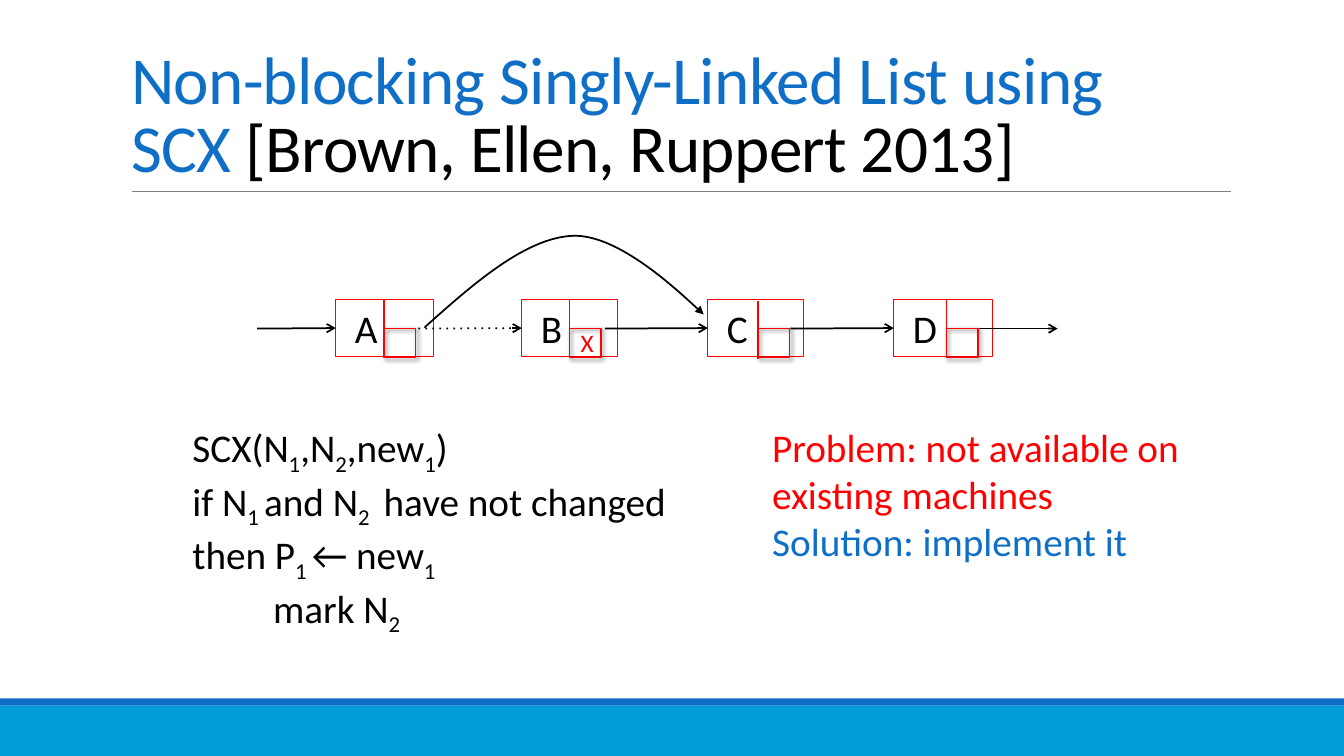
from dataclasses import dataclass

import lxml.etree
import pptx
import pptx.dml.color
import pptx.enum.shapes
import pptx.enum.text
import pptx.oxml.ns
import pptx.util

Inches = pptx.util.Inches
Pt = pptx.util.Pt
qn = pptx.oxml.ns.qn
Connector = pptx.enum.shapes.MSO_CONNECTOR
Anchor = pptx.enum.text.MSO_ANCHOR
RECTANGLE = pptx.enum.shapes.MSO_SHAPE.RECTANGLE

BLACK, RED, BLUE, CYAN, GREY = "000000", "FF0000", "0F6FC6", "009DD9", "808080"
FIRST_LEFT, PITCH = 3.33, 1.845
NODE_TOP, NODE_HEIGHT = 2.97, 0.57
LINK_Y = 3.26


@dataclass
class Node:
    label: str
    width: float
    divider: float
    divider_top: float
    link_start: float


@dataclass
class Line:
    text: str
    color: str = BLACK
    indent: float = 0


NODES = [
    Node("A", 0.97, 3.81, 2.97, 4.15),
    Node("B", 0.95, 5.65, 2.97, 6.0),
    Node("C", 0.95, 7.52, 2.99, 7.84),
    Node("D", 0.98, 9.39, 2.97, 9.71),
]
SCX_STEPS = [
    Line("SCX(N|1|,N|2|,new|1|)"),
    Line("if N|1 |and N|2 | have not changed"),
    Line("then P|1 |← new|1"),
    Line("mark N|2", indent=0.8),
]
REMARKS = [
    Line("Problem: not available on existing machines", RED),
    Line("Solution: implement it", BLUE),
]


def rgb(color: str):
    return pptx.dml.color.RGBColor.from_string(color)


def set_font(font, size: float, color: str) -> None:
    font.name = "Calibri"
    font.size = Pt(size)
    font.color.rgb = rgb(color)


def set_line(shape, color: str, width: float, dash: str = "", arrow: str = "") -> None:
    shape.line.color.rgb = rgb(color)
    shape.line.width = Pt(width)
    ln = shape.line._get_or_add_ln()
    if dash:
        lxml.etree.SubElement(ln, qn("a:prstDash"), val=dash)
    if arrow:
        lxml.etree.SubElement(ln, qn("a:tailEnd"), type=arrow)


def add_box(slide, left: float, top: float, width: float, height: float,
            fill: str = "", outline: str = "", line_width: float = 1):
    box = slide.shapes.add_shape(
        RECTANGLE, Inches(left), Inches(top), Inches(width), Inches(height))
    box.shadow.inherit = False
    if fill:
        box.fill.solid()
        box.fill.fore_color.rgb = rgb(fill)
    else:
        box.fill.background()
    if outline:
        set_line(box, outline, line_width)
    else:
        box.line.fill.background()
    return box


def add_line(slide, x1: float, y1: float, x2: float, y2: float,
             color: str, width: float, dash: str = "", arrow: str = ""):
    line = slide.shapes.add_connector(
        Connector.STRAIGHT, Inches(x1), Inches(y1), Inches(x2), Inches(y2))
    set_line(line, color, width, dash, arrow)
    lxml.etree.SubElement(line._element.spPr, qn("a:effectLst"))
    return line


def add_text(slide, left: float, top: float, width: float, height: float,
             lines: list[Line], size: float = 28):
    box = slide.shapes.add_textbox(
        Inches(left), Inches(top), Inches(width), Inches(height))
    frame = box.text_frame
    frame.word_wrap = True
    for index, line in enumerate(lines):
        paragraph = frame.add_paragraph() if index else frame.paragraphs[0]
        if line.indent:
            paragraph._p.get_or_add_pPr().set("marL", str(Inches(line.indent)))
        set_font(paragraph.font, size, line.color)
        for position, part in enumerate(line.text.split("|")):
            if part:
                run = paragraph.add_run()
                run.text = part
                if position % 2:
                    run._r.get_or_add_rPr().set("baseline", "-25000")
    return box


def add_title(slide) -> None:
    title = slide.shapes.title
    title.left, title.top = Inches(1.2), Inches(0.31)
    title.width, title.height = Inches(11), Inches(1.59)
    frame = title.text_frame
    frame.word_wrap = True
    frame.auto_size = pptx.enum.text.MSO_AUTO_SIZE.NONE
    frame.vertical_anchor = Anchor.BOTTOM
    paragraph = frame.paragraphs[0]
    paragraph.alignment = pptx.enum.text.PP_ALIGN.LEFT
    paragraph.line_spacing = 0.85
    set_font(paragraph.font, 48, BLUE)
    parts = [("Non-blocking Singly-Linked List using", BLUE), ("SCX ", BLUE),
             ("[Brown, Ellen, Ruppert 2013]", BLACK)]
    for index, (text, color) in enumerate(parts):
        if index == 1:
            paragraph.add_line_break()
        run = paragraph.add_run()
        run.text = text
        set_font(run.font, 48, color)
        run._r.get_or_add_rPr().set("spc", "-50")


def add_node(slide, node: Node, left: float):
    box = add_box(slide, left, NODE_TOP, node.width, NODE_HEIGHT, "", RED, 0.75)
    frame = box.text_frame
    frame.word_wrap = True
    frame.vertical_anchor = Anchor.MIDDLE
    frame.margin_left, frame.margin_right = Inches(0.19), 0
    label = frame.paragraphs[0]
    label.text = node.label
    label.alignment = pptx.enum.text.PP_ALIGN.LEFT
    set_font(label.font, 28, BLACK)
    add_line(slide, node.divider, node.divider_top,
             node.divider, node.divider_top + NODE_HEIGHT, RED, 1)
    return box


def add_mark_cell(slide, node: Node) -> None:
    cell = add_box(slide, node.divider, LINK_Y, 0.31, 0.29, "", RED, 1)
    effects = cell._element.spPr.find(qn("a:effectLst"))
    shadow = lxml.etree.SubElement(
        effects, qn("a:outerShdw"), blurRad=str(Pt(3)), dist=str(Pt(2)),
        dir="2700000", algn="tl", rotWithShape="0")
    color = lxml.etree.SubElement(shadow, qn("a:srgbClr"), val=BLACK)
    lxml.etree.SubElement(color, qn("a:alpha"), val="60000")


def add_bypass(slide) -> None:
    controls = [(4.71, 2.8), (5.22, 2.36), (5.68, 2.34),
                (6.14, 2.32), (6.98, 3.12), (6.98, 3.12)]
    builder = slide.shapes.build_freeform(Inches(4.21), Inches(3.25))
    builder.add_line_segments(
        [(Inches(x), Inches(y)) for x, y in controls], close=False)
    bypass = builder.convert_to_shape()
    outline = bypass._element.spPr.find(".//" + qn("a:path"))
    segments = outline.findall(qn("a:lnTo"))
    for start in range(0, len(segments), 3):
        curve = lxml.etree.SubElement(outline, qn("a:cubicBezTo"))
        for segment in segments[start:start + 3]:
            curve.append(segment[0])
            outline.remove(segment)
    bypass.shadow.inherit = False
    bypass.fill.background()
    set_line(bypass, BLACK, 1.25, arrow="triangle")


def main() -> None:
    deck = pptx.Presentation()
    deck.slide_width, deck.slide_height = Inches(13.33), Inches(7.5)
    slide = deck.slides.add_slide(deck.slide_layouts[5])
    add_box(slide, 0, 7, 13.33, 0.5, CYAN)
    add_box(slide, 0, 6.93, 13.33, 0.07, BLUE)
    add_line(slide, 1.31, 1.9, 12.21, 1.9, GREY, 0.5)
    add_title(slide)

    link_start = 2.55
    for index, node in enumerate(NODES):
        left = FIRST_LEFT + index * PITCH
        box = add_node(slide, node, left)
        link = add_line(slide, link_start, LINK_Y, left, LINK_Y, BLACK, 1.25,
                        "dot" if index == 1 else "", "arrow")
        link.end_connect(box, 1)
        add_mark_cell(slide, node)
        link_start = node.link_start
    add_line(slide, link_start, LINK_Y, 10.49, LINK_Y, BLACK, 1.25, arrow="arrow")
    add_bypass(slide)

    add_text(slide, 5.66, 3.2, 0.33, 0.4, [Line("X", RED)], 18)
    add_text(slide, 1.81, 4.15, 5.51, 1.99, SCX_STEPS)
    add_text(slide, 7.56, 4.15, 5.51, 1.51, REMARKS)
    deck.save("out.pptx")


if __name__ == "__main__":
    main()
